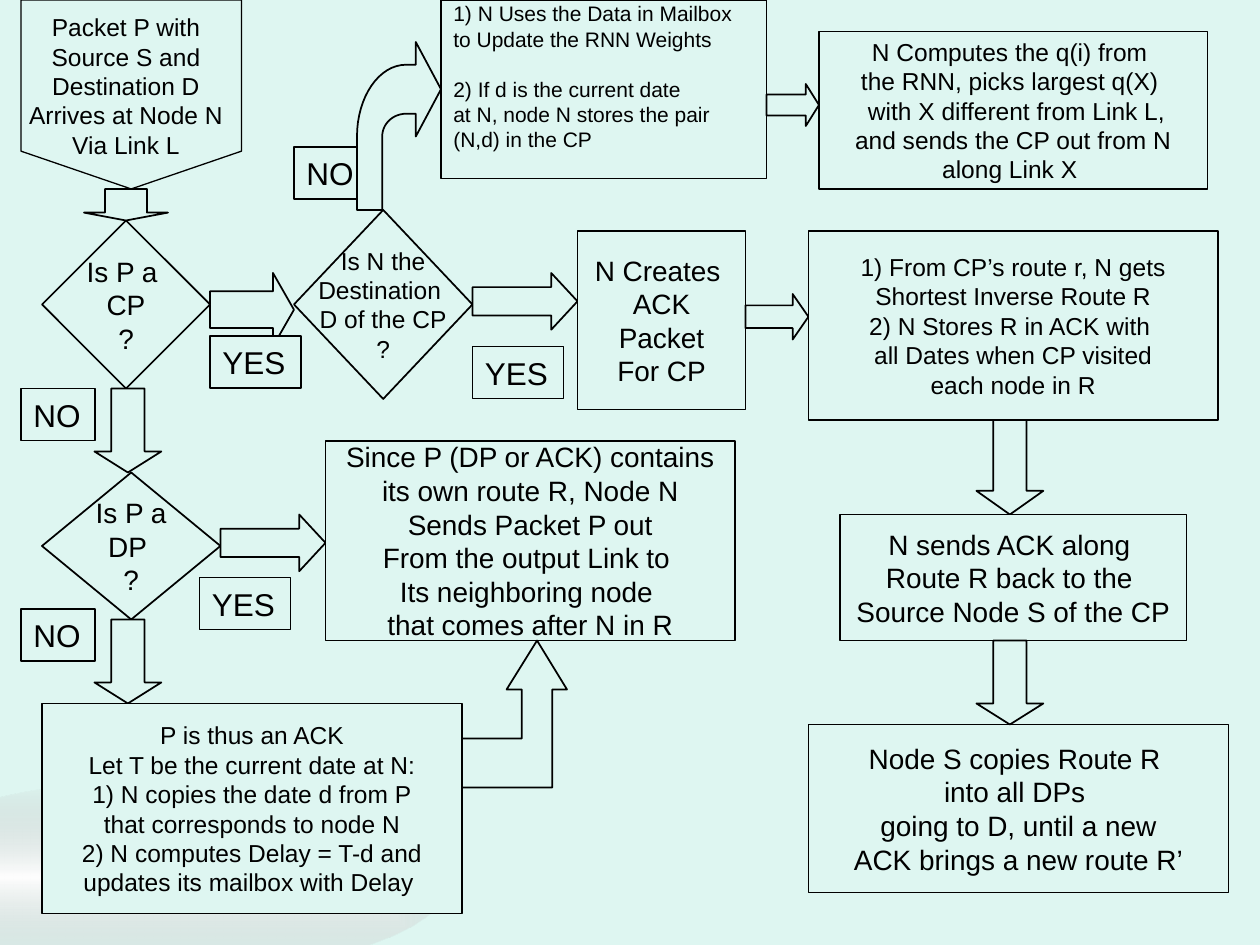
"""Flowchart of how a node routes cognitive, data and acknowledgement packets."""
import math

from lxml import etree
from pptx import Presentation
from pptx.dml.color import RGBColor
from pptx.enum import shapes, text
from pptx.util import Pt

M, A = shapes.MSO_SHAPE, text.PP_ALIGN
BACK, INK, FONT = "DEF6F1", "000000", "Arial"
BOX, DIAMOND, LABEL = M.FLOWCHART_PROCESS, M.FLOWCHART_DECISION, M.RECTANGLE
RIGHT, DOWN = M.RIGHT_ARROW, M.DOWN_ARROW
GLOW = (-72, 446, 330, 110)
GLOW_STOPS = [(0, "FFFFFF", 100), (100, "B6B6B6", 0)]


def quarter(cx, cy, rx, ry, start, end):
    """Return points along an elliptic arc between two angles in degrees."""
    angles = [math.radians(start + (end - start) * i / 16) for i in range(17)]
    return [(cx + rx * math.cos(a), cy - ry * math.sin(a)) for a in angles]


CURVED_ARROW = [
    (252, 51), (237.6, 24), (237.6, 37),
    *quarter(232, 78, 28, 41, 90, 180), (204, 120), (218.4, 120),
    *quarter(232, 78, 13.6, 13, 180, 90), (237.6, 65), (237.6, 78),
]
BENT_ARROW = [
    (306.9, 366), (289.5, 394), (298.2, 394), (298.2, 422), (264, 422),
    (264, 450), (315.6, 450), (315.6, 394), (324, 394),
]

FLOW = [
    (DIAMOND, (168, 120, 102, 108), 14,
     ["Is N the", "Destination ", "D of the CP", "?"]),
    (RIGHT, (120, 156, 48, 42)),
    (RIGHT, (270, 156, 60, 32.4)),
    (LABEL, (270, 198), "YES"),
    (BOX, (330, 132, 96, 102), 16, ["N Creates ", "ACK", "Packet", "For CP"]),
    (RIGHT, (426, 168, 36, 26)),
    (BOX, (462, 132, 234, 108), 14,
     ["1) From CP’s route r, N gets", "Shortest Inverse Route R",
      "2) N Stores R in ACK with ", "all Dates when CP visited",
      "each node in R"]),
    (DOWN, (558, 240, 38.2, 54)),
    (BOX, (480, 294, 198, 72), 16,
     ["N sends ACK along ", "Route R back to the ",
      "Source Node S of the CP"]),
    (BOX, (462, 414, 240, 96), 16,
     ["Node S copies Route R ", "into all DPs ", "going to D, until a new",
      "ACK brings a new route R’"]),
    (DOWN, (558, 366, 38.2, 48)),
    (LABEL, (168, 84), "NO"),
    (DIAMOND, (24, 126, 96, 96), 16, ["Is P a ", "CP", "?"]),
    (DOWN, (48, 108, 48, 18)),
    (LABEL, (120, 192), "YES"),
    (DOWN, (54, 222, 38.2, 48)),
    (LABEL, (12, 222), "NO"),
    (DIAMOND, (24, 270, 102, 84), 16, ["Is P a", "DP ", "?"]),
    (BOX, (252, 0, 186, 102), 12,
     ["1) N Uses the Data in Mailbox", "to Update the RNN Weights",
      "2) If d is the current date", "at N, node N stores the pair",
      "(N,d) in the CP"],
     dict(align=A.LEFT, wrap=True, gap_at=2, gap=14.4, bottom=18)),
    (None, CURVED_ARROW),
    (BOX, (468, 18, 222, 90), 14,
     ["N Computes the q(i) from ", "the RNN, picks largest q(X) ",
      " with X different from Link L,", "and sends the CP out from N",
      "along Link X "]),
    (RIGHT, (438, 48, 30, 24)),
    (M.FLOWCHART_OFFPAGE_CONNECTOR, (12, 0, 126, 108)),
    ("text", (0, 3, 144, 92), 14,
     ["Packet P with Source S and Destination D Arrives at Node N",
      "Via Link L"], dict(wrap=True)),
    (RIGHT, (126, 294, 60, 32.4)),
    (BOX, (186, 252, 234, 114), 16,
     ["Since P (DP or ACK) contains", "its own route R, Node N",
      "Sends Packet P out", "From the output Link to ",
      "Its neighboring node ", "that comes after N in R"]),
    (LABEL, (114, 330), "YES"),
    (DOWN, (54, 354, 38.2, 48)),
    (LABEL, (12, 348), "NO"),
    (BOX, (24, 402, 240, 120), 14,
     ["P is thus an ACK", "Let T be the current date at N:",
      "1) N copies the date d from P", "that corresponds to node N",
      "2) N computes Delay = T-d and", "updates its mailbox with Delay "]),
    (None, BENT_ARROW),
]
LABEL_WIDTHS = {"YES": 52, "NO": 42.5}
LABEL_HEIGHT = 29.7


def color(value):
    """Turn a hex string into a colour."""
    return RGBColor.from_string(value)


def style(sp, width=1):
    """Give a shape the common fill and outline."""
    sp.shadow.inherit = False
    sp.fill.solid()
    sp.fill.fore_color.rgb = color(BACK)
    sp.line.color.rgb = color(INK)
    sp.line.width = Pt(width)


def write(sp, lines, size=14, align=A.CENTER, wrap=False, gap_at=None, gap=0, bottom=3.6):
    """Write one paragraph per line into a shape."""
    tf = sp.text_frame
    tf.word_wrap = wrap
    tf.vertical_anchor = text.MSO_ANCHOR.MIDDLE
    tf.margin_bottom = Pt(bottom)
    for i, line in enumerate(lines):
        p = tf.paragraphs[0] if i == 0 else tf.add_paragraph()
        p.alignment = align
        if i == gap_at:
            p.space_before = Pt(gap)
        r = p.add_run()
        r.text = line
        r.font.name, r.font.size = FONT, Pt(size)
        r.font.color.rgb = color(INK)


def add_glow(s):
    """Add the ellipse that fades from its centre."""
    sp = s.shapes.add_shape(M.OVAL, *map(Pt, GLOW))
    sp.shadow.inherit = False
    sp.line.fill.background()
    sp.fill.gradient()
    grad = sp.fill._xPr.gradFill
    ns = "{http://schemas.openxmlformats.org/drawingml/2006/main}"
    for child in list(grad):
        grad.remove(child)
    stops = etree.SubElement(grad, ns + "gsLst")
    for pos, value, alpha in GLOW_STOPS:
        stop = etree.SubElement(stops, ns + "gs", pos=str(pos * 1000))
        clr = etree.SubElement(stop, ns + "srgbClr", val=value)
        etree.SubElement(clr, ns + "alpha", val=str(alpha * 1000))
    shade = etree.SubElement(grad, ns + "path", path="shape")
    etree.SubElement(shade, ns + "fillToRect", **dict.fromkeys("ltrb", "50000"))


def add_step(s, kind, place, *content):
    """Add one box, label, arrow or outline of the flowchart."""
    if kind is None:
        points = [(Pt(x), Pt(y)) for x, y in place]
        builder = s.shapes.build_freeform(*points[0])
        builder.add_line_segments(points[1:], close=True)
        style(builder.convert_to_shape())
    elif kind == "text":
        size, lines, options = content
        write(s.shapes.add_textbox(*map(Pt, place)), lines, size, **options)
    elif kind == LABEL:
        word = content[0]
        sp = s.shapes.add_shape(kind, *map(Pt, (*place, LABEL_WIDTHS[word], LABEL_HEIGHT)))
        style(sp)
        write(sp, [word], 18, A.LEFT)
    else:
        sp = s.shapes.add_shape(kind, *map(Pt, place))
        style(sp, 0.75 if kind == M.FLOWCHART_OFFPAGE_CONNECTOR else 1)
        if kind in (RIGHT, DOWN):
            w, h = place[2:]
            sp.adjustments[1] = (w if kind == RIGHT else h) / 4 / min(w, h)
        if content:
            size, lines, *options = content
            write(sp, lines, size, **(options[0] if options else {}))


def main():
    """Build the slide and save it."""
    prs = Presentation()
    prs.slide_width, prs.slide_height = Pt(720), Pt(540)
    s = prs.slides.add_slide(prs.slide_layouts[6])
    s.background.fill.solid()
    s.background.fill.fore_color.rgb = color(BACK)
    add_glow(s)
    for step in FLOW:
        add_step(s, *step)
    prs.save("out.pptx")


if __name__ == "__main__":
    main()
